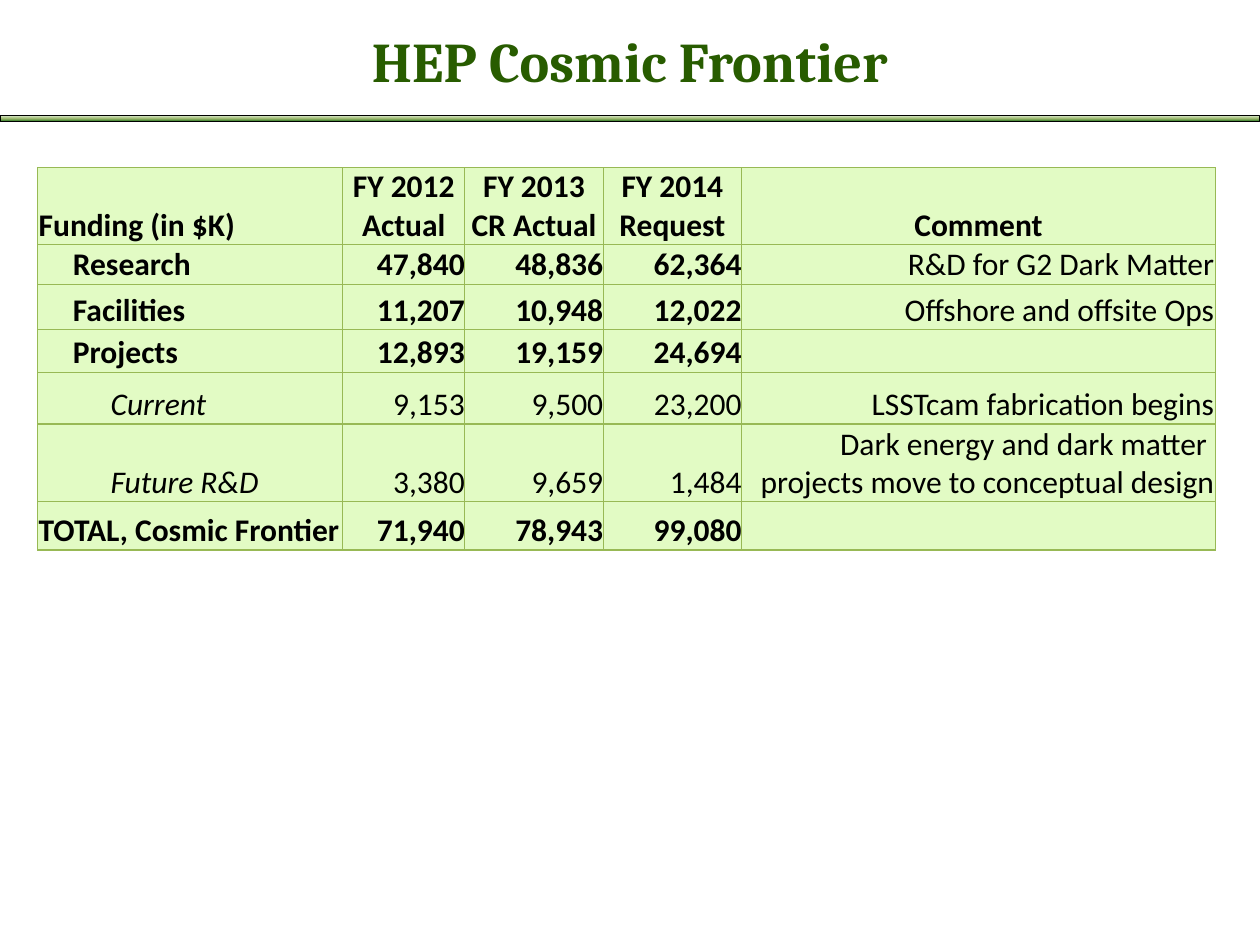
import copy

import lxml.etree
import pptx
import pptx.dml.color
import pptx.enum.shapes
import pptx.enum.text
import pptx.oxml.ns
import pptx.util

Cm = pptx.util.Cm
Align = pptx.enum.text.PP_ALIGN
Anchor = pptx.enum.text.MSO_ANCHOR

COLORS = {
    "title": "285C00",
    "text": "000000",
    "cell": "E2FBC4",
    "border": "98B955",
    "bar": ["DDEBCF", "9CB86E", "156B13"],
}
COLUMN_WIDTHS = [6.15, 2.46, 2.79, 2.79, 9.55]
ROW_HEIGHTS = [1.54, 0.79, 0.92, 0.86, 1.04, 1.57, 0.97]
ROWS = [
    ("header", "Funding (in $K)", "FY 2012 Actual", "FY 2013 CR Actual", "FY 2014 Request", "Comment"),
    ("group", "Research", "47,840", "48,836", "62,364", "R&D for G2 Dark Matter"),
    ("group", "Facilities", "11,207", "10,948", "12,022", "Offshore and offsite Ops"),
    ("group", "Projects", "12,893", "19,159", "24,694", ""),
    ("detail", "Current", "9,153", "9,500", "23,200", "LSSTcam fabrication begins"),
    ("detail", "Future R&D", "3,380", "9,659", "1,484",
     "Dark energy and dark matter \nprojects move to conceptual design"),
    ("total", "TOTAL, Cosmic Frontier", "71,940", "78,943", "99,080", ""),
]


def rgb(value):
    return pptx.dml.color.RGBColor.from_string(value)


def set_all(target, values):
    for name, value in values.items():
        setattr(target, name, value)


class FundingSlide:
    def __init__(self, deck):
        self.slide = deck.slides.add_slide(deck.slide_layouts[5])
        self.title_font = {"name": "Cambria", "size": pptx.util.Pt(32), "bold": True}
        self.cell_font = {"name": "Calibri", "size": pptx.util.Pt(18)}

    def add_text(self, para, text, font, color):
        span = para.add_run()
        span.text = text
        set_all(span.font, font)
        span.font.color.rgb = rgb(color)

    def title(self, text):
        box = self.slide.shapes.title
        set_all(box, {"left": 0, "top": Cm(0.48), "width": Cm(25.4), "height": Cm(1.47)})
        box.text_frame.vertical_anchor = Anchor.MIDDLE
        para = box.text_frame.paragraphs[0]
        para.alignment = Align.CENTER
        self.add_text(para, text, self.title_font, COLORS["title"])

    def bar(self, top, height):
        box = self.slide.shapes.add_shape(
            pptx.enum.shapes.MSO_SHAPE.RECTANGLE, 0, Cm(top), Cm(25.4), Cm(height))
        box.shadow.inherit = False
        box.fill.gradient()
        box.fill.gradient_angle = 270
        stop_list = box._element.spPr.find(".//" + pptx.oxml.ns.qn("a:gsLst"))
        stop_list.insert(1, copy.deepcopy(stop_list[0]))
        for stop, position, color in zip(box.fill.gradient_stops, (0, 0.5, 1), COLORS["bar"]):
            stop.position = position
            stop.color.rgb = rgb(color)
        box.line.color.rgb = rgb(COLORS["text"])
        box.line.width = pptx.util.Pt(0.5)

    def borders(self, cell):
        properties = cell._tc.get_or_add_tcPr()
        for side in ("a:lnL", "a:lnR", "a:lnT", "a:lnB"):
            line = lxml.etree.SubElement(
                properties, pptx.oxml.ns.qn(side), w=str(pptx.util.Pt(0.75)))
            fill = lxml.etree.SubElement(line, pptx.oxml.ns.qn("a:solidFill"))
            lxml.etree.SubElement(fill, pptx.oxml.ns.qn("a:srgbClr"), val=COLORS["border"])

    def cell(self, cell, kind, column, text):
        label, comment = column == 0, column == 4
        indented = label and kind in ("group", "detail")
        edge = Cm(0.02) if label or comment else 0
        set_all(cell, {
            "vertical_anchor": Anchor.BOTTOM,
            "margin_left": Cm(0.71) if indented else edge,
            "margin_right": edge,
            "margin_top": edge,
            "margin_bottom": 0,
        })
        self.borders(cell)
        cell.fill.solid()
        cell.fill.fore_color.rgb = rgb(COLORS["cell"])
        font = dict(
            self.cell_font,
            bold=kind == "header" or (kind != "detail" and not comment),
            italic=label and kind == "detail",
        )
        for index, line in enumerate(text.split("\n") if text else []):
            para = cell.text_frame.add_paragraph() if index else cell.text_frame.paragraphs[0]
            if label:
                para.alignment = Align.LEFT
            else:
                para.alignment = Align.CENTER if kind == "header" else Align.RIGHT
            if label and kind == "detail":
                para.level = 1
                para._p.get_or_add_pPr().set("marL", str(Cm(0.76)))
            self.add_text(para, line, font, COLORS["text"])

    def table(self, left, top):
        frame = self.slide.shapes.add_table(
            len(ROWS), len(COLUMN_WIDTHS), Cm(left), Cm(top),
            Cm(sum(COLUMN_WIDTHS)), Cm(sum(ROW_HEIGHTS)))
        table = frame.table
        set_all(table, {"first_row": False, "horz_banding": False})
        for column, width in zip(table.columns, COLUMN_WIDTHS):
            column.width = Cm(width)
        for row, height, (kind, *texts) in zip(table.rows, ROW_HEIGHTS, ROWS):
            row.height = Cm(height)
            for index, text in enumerate(texts):
                self.cell(row.cells[index], kind, index, text)


def main():
    deck = pptx.Presentation()
    set_all(deck, {"slide_width": Cm(25.4), "slide_height": Cm(19.05)})
    page = FundingSlide(deck)
    page.title("HEP Cosmic Frontier")
    page.table(0.76, 3.38)
    page.bar(2.33, 0.13)
    deck.save("out.pptx")


if __name__ == "__main__":
    main()
